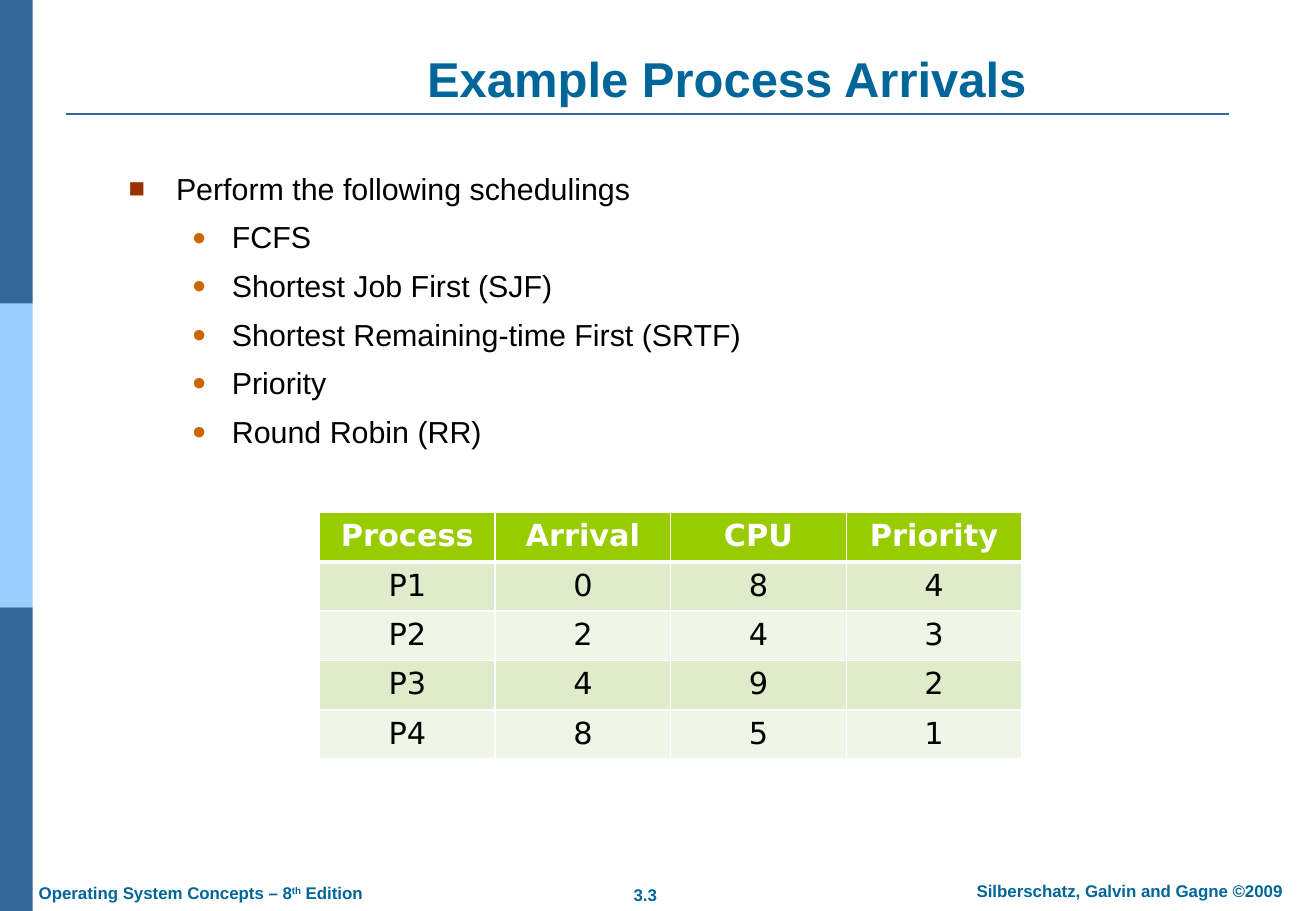
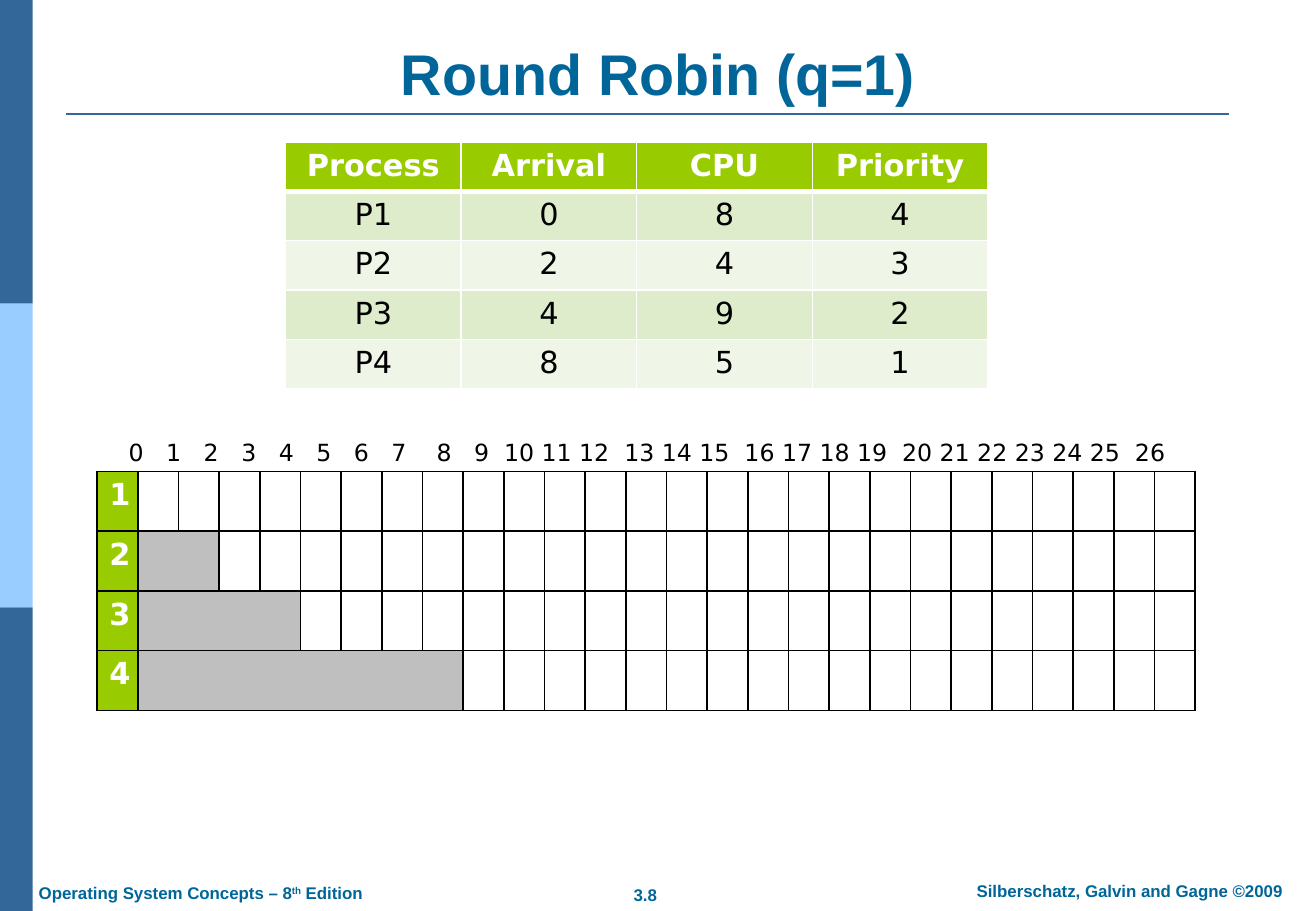
"""Build two CPU scheduling slides with shared bands, titles and footers."""
from typing import NamedTuple

from lxml.etree import SubElement as Sub
from pptx import Presentation as Deck
from pptx.dml.color import RGBColor as Rgb
from pptx.enum.shapes import MSO_CONNECTOR as Link, MSO_SHAPE as Shape
from pptx.enum.text import MSO_ANCHOR as Anchor, PP_ALIGN as Align
from pptx.oxml.ns import qn
from pptx.util import Inches, Pt

NAVY = Rgb(0x33, 0x66, 0x99)
SKY = Rgb(0x99, 0xCC, 0xFF)
TEAL = Rgb(0x00, 0x66, 0x99)
RUST = Rgb(0x99, 0x33, 0x00)
AMBER = Rgb(0xCC, 0x66, 0x00)
LIME = Rgb(0x99, 0xCC, 0x00)
MINT = Rgb(0xDE, 0xEC, 0xCC)
PALE = Rgb(0xEF, 0xF6, 0xE7)
GREY = Rgb(0xBF, 0xBF, 0xBF)
WHITE = Rgb(0xFF, 0xFF, 0xFF)
BLACK = Rgb(0x00, 0x00, 0x00)
SANS = "Arial"
WIDE = "DejaVu Sans"


class Box(NamedTuple):
    left: float
    top: float
    width: float
    height: float

    def place(self):
        return [Inches(side) for side in self]


class Bullet(NamedTuple):
    mark: str
    color: Rgb
    size: int
    left: float
    hang: float


MAIN = Bullet("■", RUST, 90, 0.39, 0.39)
MINOR = Bullet("●", AMBER, 80, 0.85, 0.33)
TASKS = [
    (MAIN, "Perform the following schedulings"),
    (MINOR, "FCFS"),
    (MINOR, "Shortest Job First (SJF)"),
    (MINOR, "Shortest Remaining-time First (SRTF)"),
    (MINOR, "Priority"),
    (MINOR, "Round Robin (RR)"),
]
JOBS = [
    ("Process", "Arrival", "CPU", "Priority"),
    ("P1", "0", "8", "4"),
    ("P2", "2", "4", "3"),
    ("P3", "4", "9", "2"),
    ("P4", "8", "5", "1"),
]
TICKS = 26
TICK_STEP = 0.309
TICK_GAP = 0.062
GAPS = (8, 13, 16, 20, 26)


def write(para, text: str, *, size: float, color: Rgb = BLACK, font: str = SANS,
          bold: bool = False, align: Align = Align.LEFT, raised: bool = False) -> None:
    para.alignment = align
    run = para.add_run()
    run.text = text
    run.font.size = Pt(size)
    run.font.name = font
    run.font.bold = bold
    run.font.color.rgb = color
    if raised:
        run.font._element.set("baseline", "30000")


def add_box(slide, box: Box, anchor: Anchor = Anchor.TOP):
    frame = slide.shapes.add_textbox(*box.place()).text_frame
    frame.word_wrap = True
    frame.vertical_anchor = anchor
    return frame


def add_tabs(para, stops: list[float]) -> None:
    tabs = Sub(para._p.get_or_add_pPr(), qn("a:tabLst"))
    for stop in stops:
        Sub(tabs, qn("a:tab"), pos=str(Inches(stop)), algn="ctr")


def add_bullet(para, style: Bullet) -> None:
    props = para._p.get_or_add_pPr()
    props.set("marL", str(Inches(style.left)))
    props.set("indent", str(-Inches(style.hang)))
    Sub(Sub(props, qn("a:buClr")), qn("a:srgbClr"), val=str(style.color))
    Sub(props, qn("a:buSzPct"), val=str(style.size * 1000))
    Sub(props, qn("a:buFont"), typeface=SANS)
    Sub(props, qn("a:buChar"), char=style.mark)


def style_cell(cell, fill: Rgb | None, edge: Rgb, top: int = 1, base: int = 1) -> None:
    props = cell._tc.get_or_add_tcPr()
    for side, width in zip("LRTB", (1, 1, top, base)):
        line = Sub(props, qn(f"a:ln{side}"), w=str(Pt(width)))
        Sub(Sub(line, qn("a:solidFill")), qn("a:srgbClr"), val=str(edge))
    if fill is None:
        cell.fill.background()
    else:
        cell.fill.solid()
        cell.fill.fore_color.rgb = fill


def add_grid(slide, box: Box, rows: int, cols: int):
    grid = slide.shapes.add_table(rows, cols, *box.place()).table
    grid.horz_banding = False
    return grid


def add_jobs(slide, left: float, top: float) -> None:
    grid = add_grid(slide, Box(left, top, 5.78, 2.03), len(JOBS), len(JOBS[0]))
    for row, job in enumerate(JOBS):
        head = row == 0
        fill = LIME if head else (PALE, MINT)[row % 2]
        for col, text in enumerate(job):
            cell = grid.cell(row, col)
            style_cell(cell, fill, WHITE, top=3 if row == 1 else 1, base=3 if head else 1)
            write(cell.text_frame.paragraphs[0], text, size=18, font=WIDE, bold=head,
                  color=WHITE if head else BLACK, align=Align.CENTER)


def add_chart_grid(slide) -> None:
    waits = [int(job[1]) for job in JOBS[1:]]
    grid = add_grid(slide, Box(0.8, 3.88, 9.04, 1.97), len(waits), TICKS + 1)
    grid.first_row = False
    for row, wait in enumerate(waits):
        for col in range(TICKS + 1):
            fill = LIME if col == 0 else GREY if col <= wait else None
            style_cell(grid.cell(row, col), fill, BLACK)
        write(grid.cell(row, 0).text_frame.paragraphs[0], str(row + 1),
              size=18, font=WIDE, bold=True, color=WHITE)
        if wait:
            grid.cell(row, 1).merge(grid.cell(row, wait))


def add_ticks(slide) -> None:
    para = add_box(slide, Box(0.96, 3.56, 9.15, 0.34)).paragraphs[0]
    add_tabs(para, [TICK_GAP + tick * TICK_STEP + TICK_GAP * sum(gap <= tick for gap in GAPS)
                    for tick in range(1, TICKS + 1)])
    write(para, "\t".join(str(tick) for tick in range(TICKS + 1)), size=14, font=WIDE)


def add_tasks(slide) -> None:
    frame = add_box(slide, Box(0.96, 1.35, 9.75, 4.95))
    for place, (style, text) in enumerate(TASKS):
        para = frame.add_paragraph() if place else frame.paragraphs[0]
        add_bullet(para, style)
        if place:
            para.space_before = Pt(7.2)
        if style is MINOR:
            para.level = 1
        write(para, text, size=18)


def add_foot(slide, box: Box, *parts: str, align: Align = Align.CENTER) -> None:
    para = add_box(slide, box).paragraphs[0]
    for part in parts:
        write(para, part, size=10, color=TEAL, bold=True, align=align, raised=part == "th")


def add_slide(deck, title: str, number: str, box: Box, size: int):
    slide = deck.slides.add_slide(deck.slide_layouts[6])
    for place, color in enumerate((NAVY, SKY, NAVY)):
        band = slide.shapes.add_shape(Shape.RECTANGLE, *Box(0, 2.5 * place, 0.27, 2.5).place())
        band.shadow.inherit = False
        band.fill.solid()
        band.fill.fore_color.rgb = color
        band.line.fill.background()
    rule = slide.shapes.add_connector(Link.STRAIGHT, *Box(0.54, 0.94, 10.11, 0.94).place())
    rule.line.color.rgb = NAVY
    rule.line.width = Pt(1.5)
    Sub(rule._element.spPr, qn("a:effectLst"))
    add_foot(slide, Box(5.06, 7.23, 0.5, 0.28), number)
    add_foot(slide, Box(7.69, 7.2, 3.21, 0.28), "Silberschatz, Galvin and Gagne ©2009")
    add_foot(slide, Box(0.22, 7.22, 2.91, 0.28), "Operating System Concepts – 8", "th",
             " Edition", align=Align.LEFT)
    write(add_box(slide, box, Anchor.BOTTOM).paragraphs[0], title, size=size,
          color=TEAL, bold=True, align=Align.CENTER)
    return slide


def main() -> None:
    deck = Deck()
    deck.slide_width, deck.slide_height = Inches(10.83), Inches(7.5)

    first = add_slide(deck, "Example Process Arrivals", "3.3", Box(1.67, 0.3, 8.63, 0.63), 29)
    add_tasks(first)
    add_jobs(first, 2.63, 4.22)

    robin = add_slide(deck, "Round Robin (q=1)", "3.8", Box(0.54, 0.3, 9.75, 0.63), 34)
    add_chart_grid(robin)
    add_jobs(robin, 2.35, 1.17)
    add_ticks(robin)

    deck.save("out.pptx")


if __name__ == "__main__":
    main()
